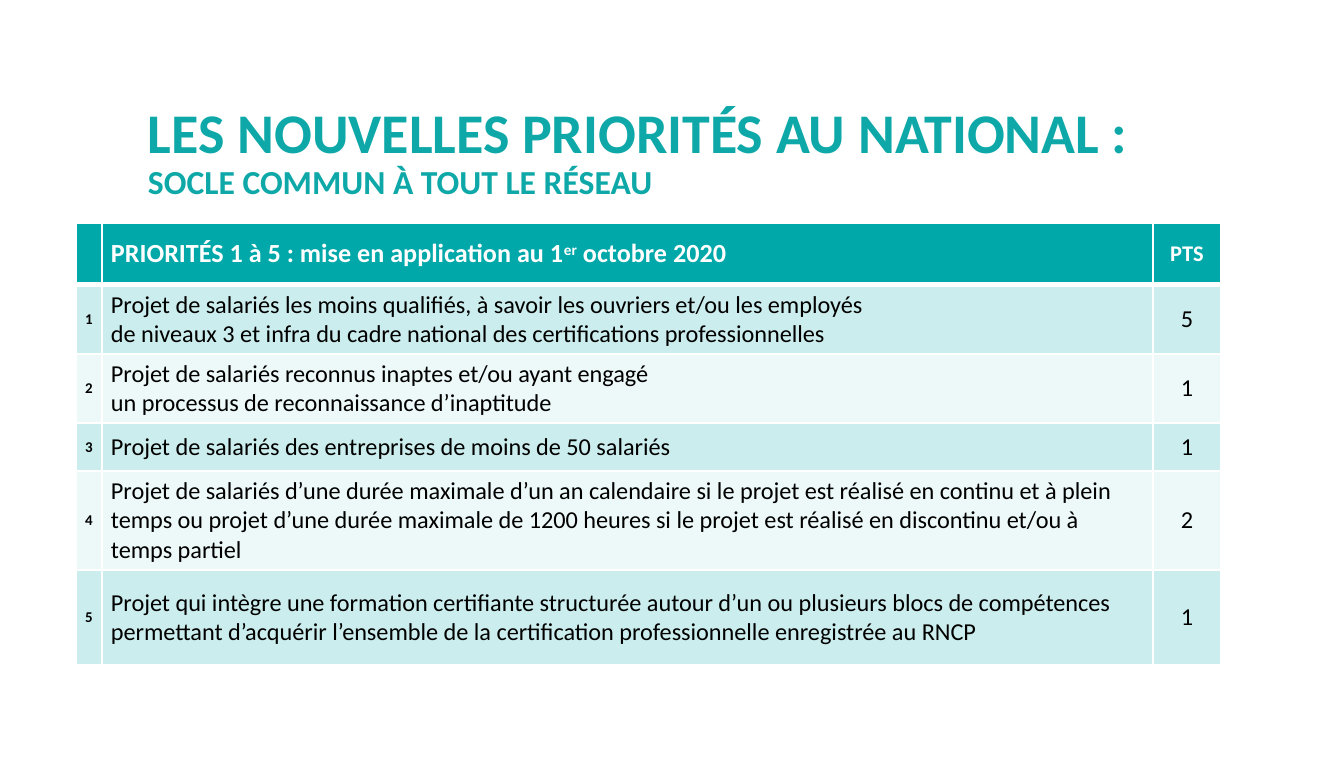
from dataclasses import dataclass

from lxml import etree
from pptx import Presentation
from pptx import util as u
from pptx.dml.color import RGBColor
from pptx.enum import text
from pptx.oxml import ns

SCALE = 914400 / 134.4


@dataclass(frozen=True)
class Theme:
    face: str = "Calibri"
    teal: str = "00A8A9"
    title: str = "0DA8A7"
    white: str = "FFFFFF"
    black: str = "000000"
    big: int = 30
    sub: int = 18
    head: int = 14
    points: int = 12
    body: int = 13
    rank: int = 8
    tints: tuple = (20, 7)


THEME = Theme()
LEFT, MID = text.PP_ALIGN.LEFT, text.PP_ALIGN.CENTER
INSETS = {"margin_left": 9, "margin_right": 9, "margin_top": 5, "margin_bottom": 5}
COLS = [26, 1051, 68]
ROWS = [62, 69, 69, 48, 98, 95]
GOALS = [
    (["Projet de salariés les moins qualifiés, à savoir les ouvriers et/ou les employés",
      "de niveaux 3 et infra du cadre national des certifications professionnelles"], 5),
    (["Projet de salariés reconnus inaptes et/ou ayant engagé",
      "un processus de reconnaissance d’inaptitude"], 1),
    (["Projet de salariés des entreprises de moins de 50 salariés"], 1),
    (["Projet de salariés d’une durée maximale d’un an calendaire si le projet est "
      "réalisé en continu et à plein temps ou projet d’une durée maximale de 1200 heures "
      "si le projet est réalisé en discontinu et/ou à temps partiel"], 2),
    (["Projet qui intègre une formation certifiante structurée autour d’un ou plusieurs "
      "blocs de compétences permettant d’acquérir l’ensemble de la certification "
      "professionnelle enregistrée au RNCP"], 1),
]


def px(n):
    return u.Emu(round(n * SCALE))


def pad(box):
    for name, size in INSETS.items():
        setattr(box, name, px(size))


def style(font, size, color, bold):
    look = {"name": THEME.face, "size": u.Pt(size), "bold": bold}
    for name, value in look.items():
        setattr(font, name, value)
    font.color.rgb = RGBColor.from_string(color)


def write(frame, lines, size, color, bold=False, align=LEFT):
    """Fill a frame with paragraphs; each line is a string or a list of runs."""
    for i, line in enumerate(lines):
        para = frame.add_paragraph() if i else frame.paragraphs[0]
        para.alignment = align
        for part in [line] if isinstance(line, str) else line:
            run = para.add_run()
            run.text = part
            style(run.font, size, color, bold)


def edge(cell, base):
    """Draw white cell borders; base is the width of the bottom one in points."""
    props = cell._tc.get_or_add_tcPr()
    for side, width in zip("LRTB", (1, 1, 1, base)):
        line = etree.SubElement(props, ns.qn(f"a:ln{side}"), w=str(u.Pt(width)))
        fill = etree.SubElement(line, ns.qn("a:solidFill"))
        etree.SubElement(fill, ns.qn("a:srgbClr"), val=THEME.white)


def paint(cell, tint=None):
    """Fill a cell with teal, at tint percent opacity if given."""
    cell.fill.solid()
    cell.fill.fore_color.rgb = RGBColor.from_string(THEME.teal)
    if tint:
        color = cell._tc.tcPr.find(ns.qn("a:solidFill")).find(ns.qn("a:srgbClr"))
        etree.SubElement(color, ns.qn("a:alpha"), val=str(tint * 1000))


def add_title(slide):
    title = slide.shapes.title
    place = {"left": 139, "top": 100, "width": 1022, "height": 90}
    for name, value in place.items():
        setattr(title, name, px(value))
    frame = title.text_frame
    pad(frame)
    frame.auto_size = text.MSO_AUTO_SIZE.NONE
    frame.vertical_anchor = text.MSO_ANCHOR.TOP
    frame.word_wrap = True
    write(frame, ["LES NOUVELLES PRIORITÉS AU NATIONAL :",
                  "SOCLE COMMUN À TOUT LE RÉSEAU"], THEME.big, THEME.title, True)
    for para in frame.paragraphs:
        para.line_spacing = 0.9
    frame.paragraphs[1].runs[0].font.size = u.Pt(THEME.sub)


def add_grid(slide):
    frame = slide.shapes.add_table(len(ROWS), len(COLS), px(76), px(223),
                                   px(sum(COLS)), px(sum(ROWS)))
    table = frame.table
    table.first_row = table.horz_banding = False
    for col, width in zip(table.columns, COLS):
        col.width = px(width)
    for i, (row, height) in enumerate(zip(table.rows, ROWS)):
        row.height = px(height)
        for cell in row.cells:
            pad(cell)
            cell.vertical_anchor = text.MSO_ANCHOR.MIDDLE
            edge(cell, 1 if i else 3)
            paint(cell, THEME.tints[(i - 1) % 2] if i else None)
    return table


def fill_grid(table):
    head, mark = table.cell(0, 1).text_frame, table.cell(0, 2).text_frame
    write(head, [["PRIORITÉS 1 à 5 : mise en application au 1", "er", " octobre 2020"]],
          THEME.head, THEME.white, True)
    head.paragraphs[0].runs[1].font._element.set("baseline", "30000")
    write(mark, ["PTS"], THEME.points, THEME.white, True, MID)
    for i, (lines, score) in enumerate(GOALS, 1):
        rank, goal, mark = (table.cell(i, j).text_frame for j in range(3))
        write(rank, [str(i)], THEME.rank, THEME.black, True, MID)
        write(goal, lines, THEME.body, THEME.black)
        write(mark, [str(score)], THEME.body, THEME.black, align=MID)


def main():
    deck = Presentation()
    deck.slide_width, deck.slide_height = px(1344), px(757)
    slide = deck.slides.add_slide(deck.slide_layouts[5])
    add_title(slide)
    fill_grid(add_grid(slide))
    deck.save("out.pptx")


if __name__ == "__main__":
    main()
